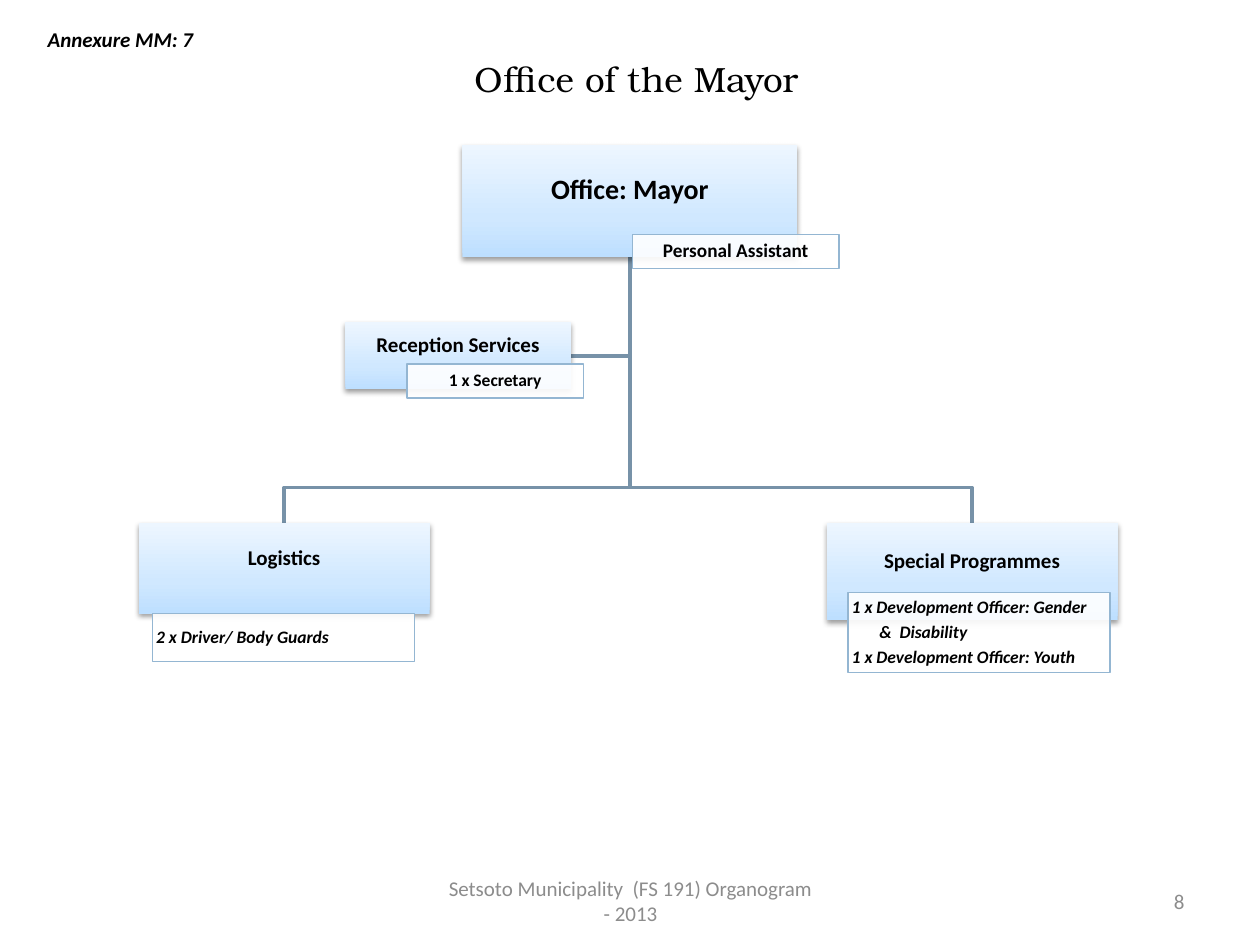
from typing import NamedTuple, Optional

from pptx import Presentation, util as u
from pptx.dml.color import RGBColor
from pptx.enum import shapes, text
from pptx.oxml import parse_xml
from pptx.oxml.ns import nsdecls, qn

COLORS = {
    "ink": "000000", "muted": "8C8C8C", "branch": "7792A8", "border": "94B6D2",
    "paper": "FFFFFF", "low": "BDDFFF", "middle": "D0E8FF", "high": "EDF6FF",
}
GRADIENT = ((0, "low"), (35, "middle"), (100, "high"))
COLUMNS, ROWS = 100, 75  # the slide's grid
LEFT, CENTER, RIGHT = text.PP_ALIGN.LEFT, text.PP_ALIGN.CENTER, text.PP_ALIGN.RIGHT
MIDDLE, TOP = text.MSO_ANCHOR.MIDDLE, text.MSO_ANCHOR.TOP

prs = Presentation()
prs.slide_width, prs.slide_height = u.Inches(10), u.Inches(7.5)
slide = prs.slides.add_slide(prs.slide_layouts[6])


class Area(NamedTuple):
    col: float
    row: float
    cols: float
    rows: float

    @property
    def center(self) -> float:
        return self.col + self.cols / 2


class Style(NamedTuple):
    size: float
    align: text.PP_ALIGN = CENTER
    bold: bool = False
    italic: bool = False
    color: str = "ink"
    font: str = "Calibri"


class Staff(NamedTuple):
    area: Area
    lines: tuple[str, ...]
    style: Style
    hanging_line: Optional[int] = None  # index of a line carried over from the one above


class Unit(NamedTuple):
    area: Area
    title: str
    size: float
    staff: Staff


class Label(NamedTuple):
    area: Area
    words: str
    style: Style
    anchor: text.MSO_ANCHOR = MIDDLE


def x(col: float) -> int:
    return round(prs.slide_width * col / COLUMNS)


def y(row: float) -> int:
    return round(prs.slide_height * row / ROWS)


def place(area: Area) -> tuple[int, int, int, int]:
    return x(area.col), y(area.row), x(area.cols), y(area.rows)


def rgb(name: str) -> RGBColor:
    return RGBColor.from_string(COLORS[name])


def write(frame, lines: tuple[str, ...], style: Style, anchor=MIDDLE) -> None:
    frame.word_wrap, frame.vertical_anchor = True, anchor
    for index, line in enumerate(lines):
        paragraph = frame.paragraphs[0] if index == 0 else frame.add_paragraph()
        paragraph.text, paragraph.alignment = line, style.align
        font = paragraph.font
        font.name, font.size = style.font, u.Pt(style.size)
        font.bold, font.italic = style.bold, style.italic
        font.color.rgb = rgb(style.color)


def add_label(label: Label) -> None:
    box = slide.shapes.add_textbox(*place(label.area))
    write(box.text_frame, (label.words,), label.style, label.anchor)


def add_box(area: Area, lines: tuple[str, ...], style: Style,
            side: float, bottom: float):
    box = slide.shapes.add_shape(shapes.MSO_SHAPE.RECTANGLE, *place(area))
    box.shadow.inherit = False
    frame = box.text_frame
    frame.margin_left = frame.margin_right = u.Inches(side)
    frame.margin_top, frame.margin_bottom = u.Inches(0.01), u.Inches(bottom)
    write(frame, lines, style)
    for paragraph in frame.paragraphs:
        paragraph.line_spacing = 0.9
        paragraph.space_after = u.Pt(0.35 * style.size)
    return box


def add_unit(unit: Unit) -> None:
    # Shaded box with a soft shadow
    box = add_box(unit.area, (unit.title,), Style(unit.size, bold=True), 0.01, 0.17)
    box.line.fill.background()
    box.fill.gradient()
    box.fill.gradient_angle = 90
    properties = box._element.spPr
    stops = properties.find(".//" + qn("a:gsLst"))
    stops.clear()
    for share, color in GRADIENT:
        stops.append(parse_xml(
            f'<a:gs {nsdecls("a")} pos="{share * 1000}">'
            f'<a:srgbClr val="{COLORS[color]}"/></a:gs>'))
    properties.find(qn("a:effectLst")).append(parse_xml(
        f'<a:outerShdw {nsdecls("a")} blurRad="40000" dist="20000" dir="5400000" '
        f'rotWithShape="0"><a:srgbClr val="{COLORS["ink"]}">'
        f'<a:alpha val="38000"/></a:srgbClr></a:outerShdw>'))

    # Staff box over its lower edge
    staff = unit.staff
    post = add_box(staff.area, staff.lines, staff.style, 0.03, 0.01)
    post.line.color.rgb, post.line.width = rgb("border"), u.Pt(0.75)
    post.fill.solid()
    post.fill.fore_color.rgb = rgb("paper")
    post._element.spPr.find(qn("a:solidFill"))[0].append(
        parse_xml(f'<a:alpha {nsdecls("a")} val="90000"/>'))
    if staff.hanging_line is not None:
        carried = post.text_frame.paragraphs[staff.hanging_line]
        carried._p.get_or_add_pPr().set("marL", str(u.Inches(0.22)))


def add_branch(*points: tuple[float, float]) -> None:
    start, *rest = [(x(col), y(row)) for col, row in points]
    builder = slide.shapes.build_freeform(*start)
    builder.add_line_segments(rest, close=False)
    branch = builder.convert_to_shape()
    branch.shadow.inherit = False
    branch.fill.background()
    branch.line.color.rgb, branch.line.width = rgb("branch"), u.Pt(2)


POST = Style(10, bold=True)
POST_LIST = Style(10, LEFT, bold=True, italic=True)

mayor = Unit(Area(36.7, 11.5, 26.6, 8.9), "Office: Mayor", 16,
             Staff(Area(50.2, 18.6, 16.4, 2.7), ("Personal Assistant",),
                   Style(11, bold=True)))
reception = Unit(Area(27.4, 25.6, 17.9, 5.3), "Reception Services", 12,
                 Staff(Area(32.3, 28.9, 14, 2.7), ("1 x Secretary",), POST))
logistics = Unit(Area(11, 41.5, 23.1, 7.2), "Logistics", 12,
                 Staff(Area(12.1, 48.7, 20.8, 3.8), ("2 x Driver/ Body Guards",),
                       POST_LIST))
programmes = Unit(Area(65.6, 41.5, 23.1, 7.7), "Special Programmes", 12,
                  Staff(Area(67.3, 47, 20.8, 6.4),
                        ("1 x Development Officer: Gender", "&  Disability",
                         "1 x Development Officer: Youth"), POST_LIST, 1))

# Footer and title
add_label(Label(Area(34.2, 69.5, 31.7, 4),
                "Setsoto Municipality  (FS 191) Organogram - 2013",
                Style(12, color="muted")))
add_label(Label(Area(5.5, 2.4, 90, 7.6), "Office of the Mayor",
                Style(20, font="TeX Gyre Bonum")))

# Branches from the mayor's office
trunk, foot, fork = mayor.area.center, mayor.area.row + mayor.area.rows, 38.7
desk = reception.area
desk_row = desk.row + desk.rows / 2
add_branch((trunk, foot), (trunk, desk_row), (desk.col + desk.cols, desk_row))
for child in (programmes, logistics):
    add_branch((trunk, foot), (trunk, fork), (child.area.center, fork),
               (child.area.center, child.area.row))

# Units with their staff
for unit in (mayor, logistics, programmes, reception):
    add_unit(unit)

# Annexure mark and page number
add_label(Label(Area(2.8, 1.6, 19.7, 3), "Annexure MM: 7",
                Style(12, LEFT, bold=True, italic=True), TOP))
add_label(Label(Area(71.7, 69.5, 23.3, 4), "8", Style(12, RIGHT, color="muted")))

prs.save("out.pptx")
